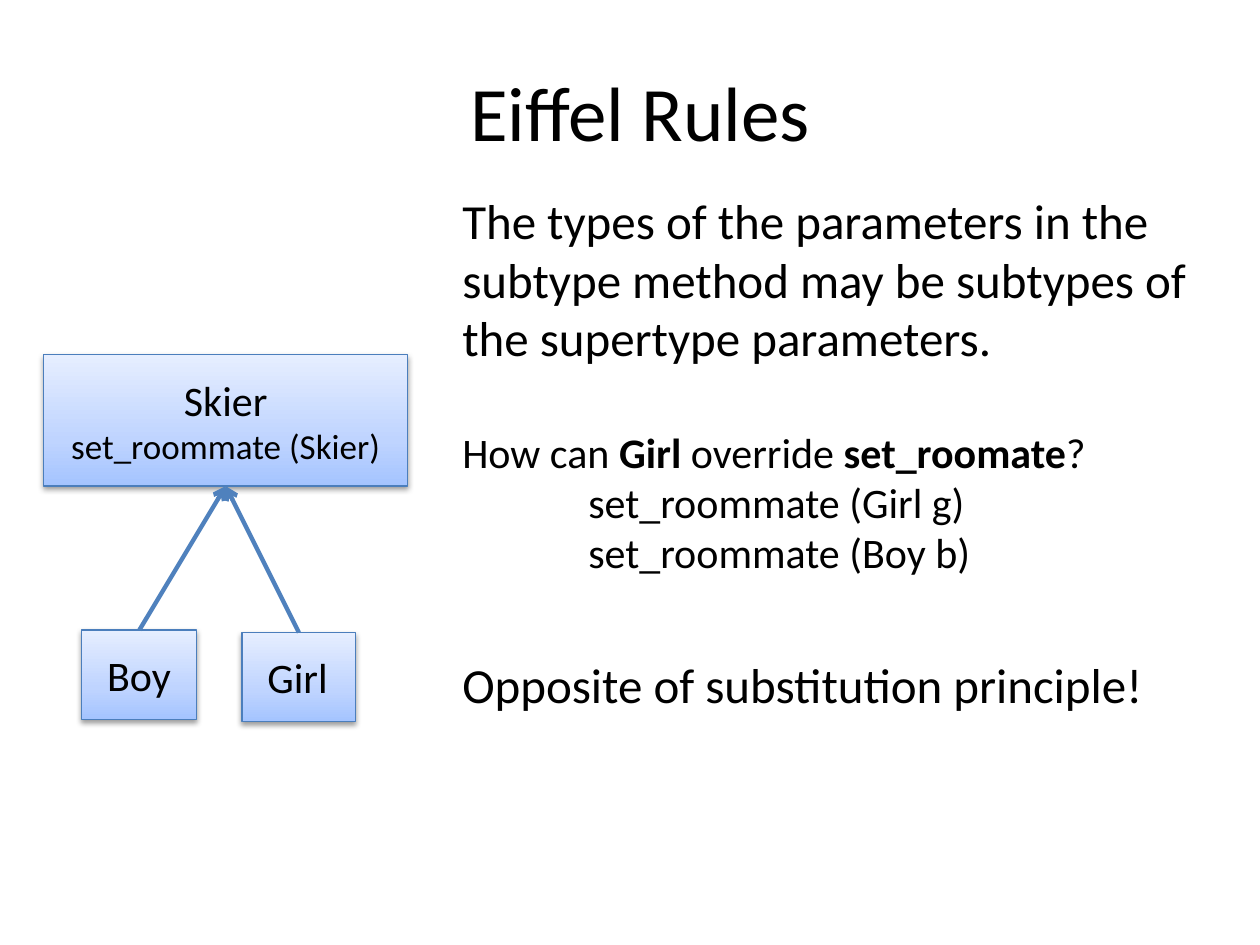
import copy

import pptx
import pptx.dml.color
import pptx.enum.shapes
import pptx.enum.text
import pptx.oxml
import pptx.oxml.ns
import pptx.util
from pptx.util import Cm

RGBColor = pptx.dml.color.RGBColor
BLACK = RGBColor(0x00, 0x00, 0x00)
BORDER_BLUE = RGBColor(0x4B, 0x7E, 0xBC)
ARROW_BLUE = RGBColor(0x4F, 0x81, 0xBD)
GRADIENT = (
    (0, RGBColor(0xA4, 0xC4, 0xFF)),
    (0.35, RGBColor(0xBF, 0xD4, 0xFF)),
    (1, RGBColor(0xE6, 0xEE, 0xFF)),
)
NAMESPACE = pptx.oxml.ns.nsdecls("a")
SHADOW = (
    f'<a:outerShdw {NAMESPACE} blurRad="40000" dist="20000" dir="5400000" rotWithShape="0">'
    '<a:srgbClr val="000000"><a:alpha val="38000"/></a:srgbClr></a:outerShdw>'
)
ALIGN = pptx.enum.text.PP_ALIGN


def add_text(paragraph, text, size=24, bold=False, font="Calibri", color=BLACK):
    run = paragraph.add_run()
    run.text = text
    run.font.size = pptx.util.Pt(size)
    run.font.bold = bold
    run.font.name = font
    run.font.color.rgb = color


class SlideBuilder:
    def __init__(self, slide):
        self.slide = slide

    def title(self, text, left, top, width, height):
        shape = self.slide.shapes.title
        shape.left, shape.top, shape.width, shape.height = left, top, width, height
        frame = shape.text_frame
        frame.vertical_anchor = pptx.enum.text.MSO_ANCHOR.MIDDLE
        frame.paragraphs[0].alignment = ALIGN.CENTER
        add_text(frame.paragraphs[0], text, size=44)

    def fill_frame(self, frame, paragraphs, alignment=ALIGN.LEFT):
        frame.auto_size = pptx.enum.text.MSO_AUTO_SIZE.SHAPE_TO_FIT_TEXT
        for index, (size, before, indent, runs) in enumerate(paragraphs):
            paragraph = frame.add_paragraph() if index else frame.paragraphs[0]
            paragraph.alignment = alignment
            paragraph.space_before = pptx.util.Pt(before)
            if indent:
                paragraph._p.get_or_add_pPr().set("marL", str(int(indent)))
            for text, bold in runs:
                add_text(paragraph, text, size=size, bold=bold)

    def text_box(self, paragraphs, left, top, width, height):
        frame = self.slide.shapes.add_textbox(left, top, width, height).text_frame
        frame.word_wrap = True
        self.fill_frame(frame, paragraphs)

    def class_box(self, lines, left, top, width, height, alignment=ALIGN.LEFT):
        shape = self.slide.shapes.add_shape(
            pptx.enum.shapes.MSO_SHAPE.RECTANGLE, left, top, width, height
        )
        shape.fill.gradient()
        shape.fill.gradient_angle = 90
        stops = shape.element.spPr.find(".//" + pptx.oxml.ns.qn("a:gsLst"))
        stops.append(copy.deepcopy(stops[0]))
        for stop, (position, color) in zip(shape.fill.gradient_stops, GRADIENT):
            stop.position = position
            stop.color.rgb = color
        shape.line.color.rgb = BORDER_BLUE
        shape.line.width = pptx.util.Pt(0.75)
        shape.shadow.inherit = False
        effects = shape.element.spPr.find(pptx.oxml.ns.qn("a:effectLst"))
        effects.append(pptx.oxml.parse_xml(SHADOW))
        frame = shape.text_frame
        frame.word_wrap = False
        frame.margin_left = frame.margin_right = Cm(0.51)
        frame.margin_top = frame.margin_bottom = Cm(0.38)
        paragraphs = [(size, 0, 0, [(text, False)]) for text, size in lines]
        self.fill_frame(frame, paragraphs, alignment)
        return shape

    def inheritance_arrow(self, child, parent):
        connector = self.slide.shapes.add_connector(
            pptx.enum.shapes.MSO_CONNECTOR.STRAIGHT, 0, 0, 0, 0
        )
        connector.begin_connect(child, 0)
        connector.end_connect(parent, 2)
        connector.line.color.rgb = ARROW_BLUE
        connector.line.width = pptx.util.Pt(2.5)
        connector.line._get_or_add_ln().append(
            pptx.oxml.parse_xml(f'<a:tailEnd {NAMESPACE} type="arrow"/>')
        )
        connector.element.spPr.append(pptx.oxml.parse_xml(f"<a:effectLst {NAMESPACE}/>"))


def main():
    presentation = pptx.Presentation()
    presentation.slide_width = Cm(25.4)
    presentation.slide_height = Cm(19.05)
    title_only = presentation.slide_layouts[5]
    builder = SlideBuilder(presentation.slides.add_slide(title_only))

    builder.title("Eiffel Rules", Cm(2.11), Cm(0.64), Cm(21.6), Cm(3.18))
    skier = builder.class_box(
        [("Skier", 24), ("set_roommate (Skier)", 20)],
        Cm(0.88), Cm(7.15), Cm(7.34), Cm(2.65), ALIGN.CENTER,
    )
    boy = builder.class_box([("Boy", 24)], Cm(1.65), Cm(12.7), Cm(2.32), Cm(1.8))
    girl = builder.class_box([("Girl", 24)], Cm(4.88), Cm(12.75), Cm(2.29), Cm(1.8))

    rule = (
        "The types of the parameters in the subtype method may be "
        "subtypes of the supertype parameters."
    )
    question = [
        ("How can ", False),
        ("Girl", True),
        (" override ", False),
        ("set_roomate", True),
        ("?", False),
    ]
    builder.text_box(
        [
            (28, 0, 0, [(rule, False)]),
            (24, 34, 0, question),
            (24, 0, Cm(2.54), [("set_roommate (Girl g)", False)]),
            (24, 0, Cm(2.54), [("set_roommate (Boy b)", False)]),
            (28, 44, 0, [("Opposite of substitution principle!", False)]),
        ],
        Cm(9.07), Cm(3.71), Cm(15.95), Cm(10.85),
    )
    for child in (boy, girl):
        builder.inheritance_arrow(child, skier)

    presentation.save("out.pptx")


if __name__ == "__main__":
    main()
